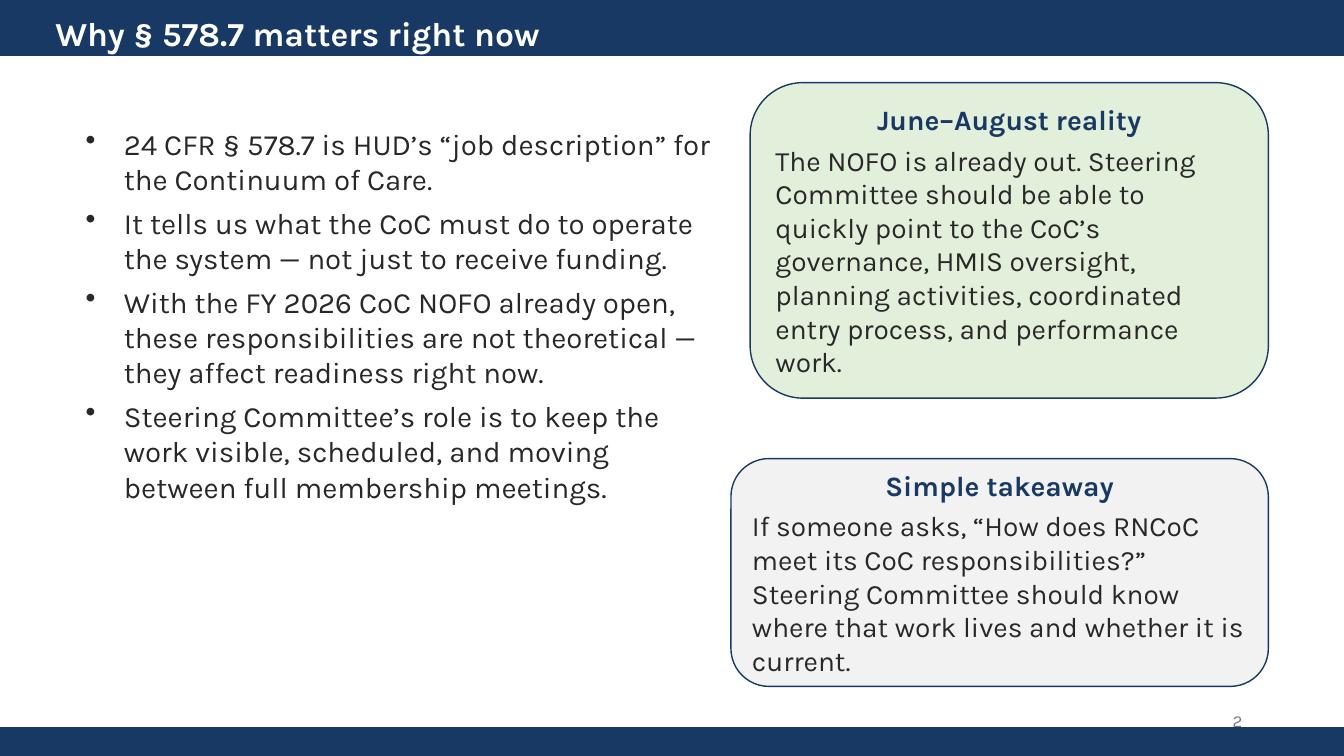
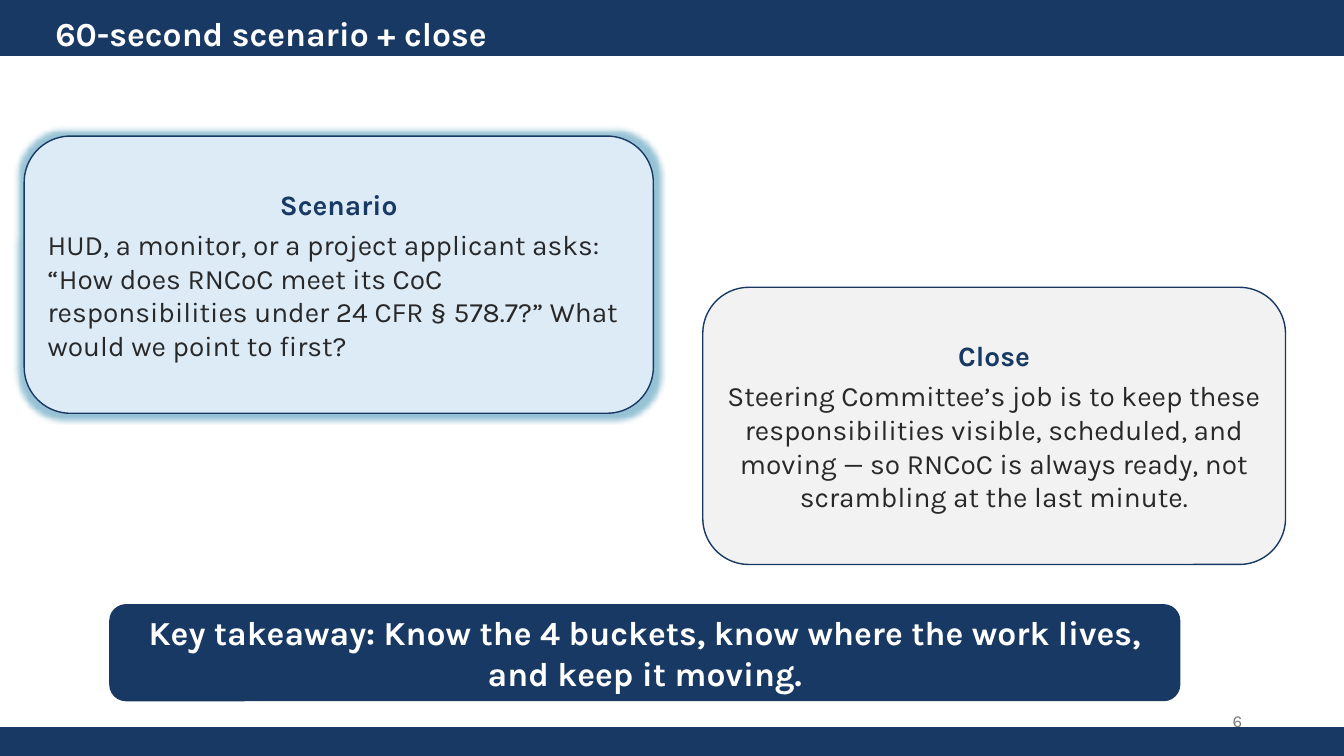
from lxml import etree
from pptx import Presentation
from pptx.dml.color import RGBColor
from pptx.enum import shapes, text
from pptx.oxml import ns
from pptx.util import Inches, Pt

FONT = "Karla"
COLORS = {
    "navy": "183963", "ink": "282828", "white": "FFFFFF", "number": "797979",
    "green": "E2EFDA", "gray": "F2F2F2", "blue": "DDEBF7", "glow": "2E86AB",
}
WIDTH, HEIGHT = 13.33, 7.5
LEFT, CENTER, RIGHT = text.PP_ALIGN.LEFT, text.PP_ALIGN.CENTER, text.PP_ALIGN.RIGHT
RECT = shapes.MSO_SHAPE.RECTANGLE
ROUNDED = shapes.MSO_SHAPE.ROUNDED_RECTANGLE


def color(name):
    """Return the named colour."""
    return RGBColor.from_string(COLORS[name])


def write(paragraph, words, size, ink, bold=False, align=LEFT, after=0):
    """Add one styled run to a paragraph."""
    paragraph.alignment = align
    paragraph.space_after = Pt(after)
    run = paragraph.add_run()
    run.text = words
    run.font.name, run.font.size, run.font.bold = FONT, Pt(size), bold
    run.font.color.rgb = color(ink)


def add_panel(slide, kind, box, fill):
    """Draw a navy-outlined shape and return it."""
    panel = slide.shapes.add_shape(kind, *map(Inches, box))
    panel.shadow.inherit = False
    panel.fill.solid()
    panel.fill.fore_color.rgb = color(fill)
    panel.line.color.rgb = color("navy")
    panel.line.width = Pt(1)
    panel.text_frame.word_wrap = True
    panel.text_frame.vertical_anchor = text.MSO_ANCHOR.MIDDLE
    return panel


def add_frame(slide, box, anchor=text.MSO_ANCHOR.TOP):
    """Add a wrapping text box and return its frame."""
    frame = slide.shapes.add_textbox(*map(Inches, box)).text_frame
    frame.word_wrap = True
    frame.vertical_anchor = anchor
    return frame


def add_glow(panel, radius):
    """Surround a panel with a soft glow."""
    effects = panel._element.spPr.find(ns.qn("a:effectLst"))
    glow = etree.SubElement(effects, ns.qn("a:glow"), rad=str(Inches(radius)))
    tint = etree.SubElement(glow, ns.qn("a:srgbClr"), val=COLORS["glow"])
    etree.SubElement(tint, ns.qn("a:alpha"), val="50000")


def add_card(slide, box, fill, heading, body, align=LEFT):
    """Add a rounded card with a centred heading and body text."""
    card = add_panel(slide, ROUNDED, box, fill)
    frame = card.text_frame
    write(frame.paragraphs[0], heading, 20, "navy", True, CENTER, 5)
    write(frame.add_paragraph(), body, 20, "ink", align=align)
    return card


def add_bullets(slide, box, points):
    """Add a bulleted list."""
    frame = add_frame(slide, box)
    for index, point in enumerate(points):
        paragraph = frame.add_paragraph() if index else frame.paragraphs[0]
        write(paragraph, point, 21, "ink", after=6)
        props = paragraph._p.get_or_add_pPr()
        props.set("marL", str(Inches(0.38)))
        props.set("indent", str(-Inches(0.38)))
        etree.SubElement(props, ns.qn("a:buChar"), char="•")


def add_base(prs, title, number):
    """Add a slide with bands, title and page number."""
    slide = prs.slides.add_slide(prs.slide_layouts[6])
    for top, height in ((0, 0.55), (HEIGHT - 0.28, 0.28)):
        add_panel(slide, RECT, (0, top, WIDTH, height), "navy")
    heading = add_frame(slide, (0.45, 0.08, 12, 0.35))
    write(heading.paragraphs[0], title, 24, "white", True)
    footer = add_frame(slide, (9.42, 6.95, 3, 0.4), text.MSO_ANCHOR.MIDDLE)
    write(footer.paragraphs[0], str(number), 12, "number", align=RIGHT)
    return slide


def build_reasons(prs):
    """Build the slide on why the rule matters."""
    slide = add_base(prs, "Why § 578.7 matters right now", 2)
    add_bullets(slide, (0.75, 1.2, 6.5, 5.02), [
        "24 CFR § 578.7 is HUD’s “job description” for the Continuum of Care.",
        "It tells us what the CoC must do to operate the system — not just to receive funding.",
        "With the FY 2026 CoC NOFO already open, these responsibilities are not "
        "theoretical — they affect readiness right now.",
        "Steering Committee’s role is to keep the work visible, scheduled, and moving "
        "between full membership meetings.",
    ])
    add_card(slide, (7.44, 0.82, 5.14, 3.13), "green", "June–August reality",
             "The NOFO is already out. Steering Committee should be able to quickly point to "
             "the CoC’s governance, HMIS oversight, planning activities, coordinated entry "
             "process, and performance work.")
    add_card(slide, (7.25, 4.55, 5.33, 2.26), "gray", "Simple takeaway",
             "If someone asks, “How does RNCoC meet its CoC responsibilities?” Steering "
             "Committee should know where that work lives and whether it is current.")


def build_close(prs):
    """Build the closing scenario slide."""
    slide = add_base(prs, "60-second scenario + close", 6)
    scenario = add_card(
        slide, (0.24, 1.35, 6.24, 2.75), "blue", "Scenario",
        "HUD, a monitor, or a project applicant asks: “How does RNCoC meet its CoC "
        "responsibilities under 24 CFR § 578.7?” What would we point to first?")
    add_glow(scenario, 0.11)
    add_card(slide, (6.97, 2.85, 5.78, 2.75), "gray", "Close",
             "Steering Committee’s job is to keep these responsibilities visible, scheduled, "
             "and moving — so RNCoC is always ready, not scrambling at the last minute.",
             CENTER)
    takeaway = add_panel(slide, ROUNDED, (1.09, 6, 10.61, 0.95), "navy")
    write(takeaway.text_frame.paragraphs[0],
          "Key takeaway: Know the 4 buckets, know where the work lives, and keep it moving.",
          24, "white", True, CENTER)


def main():
    """Build and save the presentation."""
    prs = Presentation()
    prs.slide_width, prs.slide_height = Inches(WIDTH), Inches(HEIGHT)
    build_reasons(prs)
    build_close(prs)
    prs.save("out.pptx")


if __name__ == "__main__":
    main()
